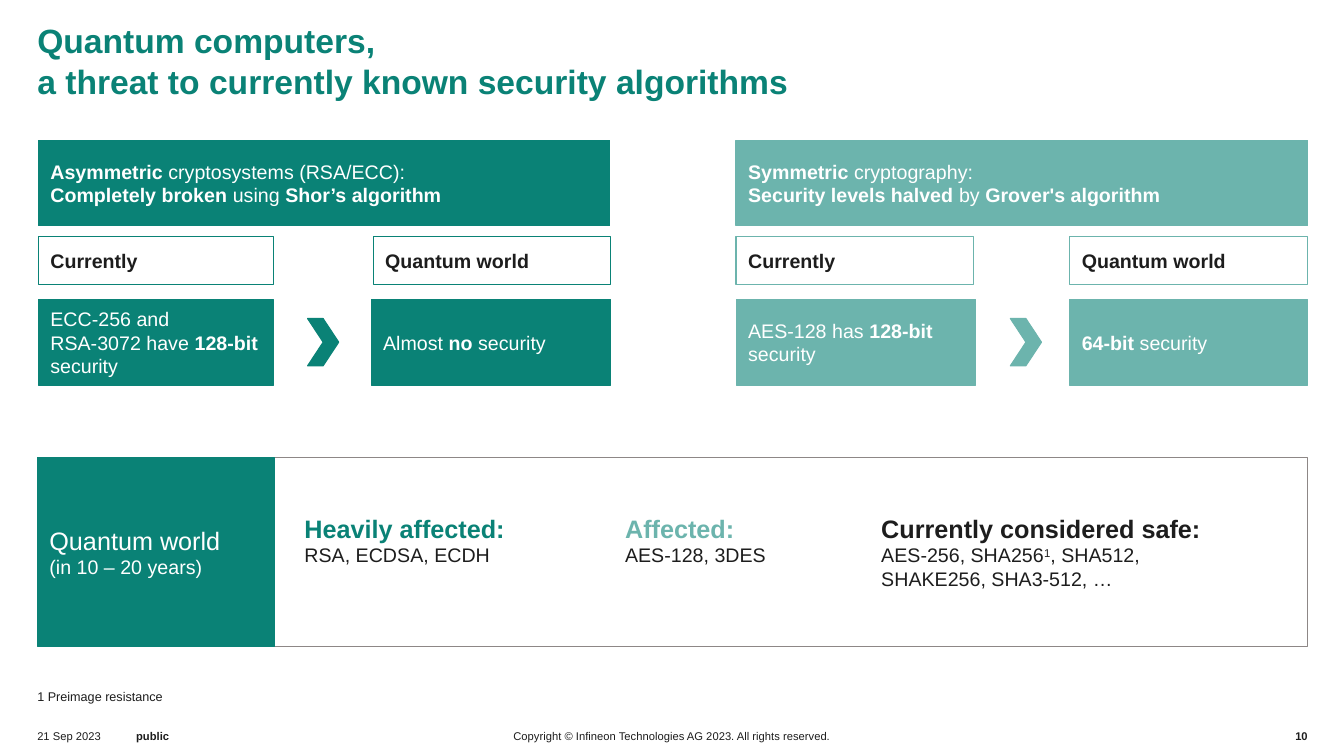
from pptx import Presentation
from pptx.dml.color import RGBColor
from pptx.enum.shapes import MSO_SHAPE
from pptx.enum.text import MSO_ANCHOR, PP_ALIGN
from pptx.util import Inches, Pt

RECT, CHEVRON = MSO_SHAPE.RECTANGLE, MSO_SHAPE.CHEVRON
TOP, MIDDLE, BOTTOM = MSO_ANCHOR.TOP, MSO_ANCHOR.MIDDLE, MSO_ANCHOR.BOTTOM
LEFT, CENTER, RIGHT = PP_ALIGN.LEFT, PP_ALIGN.CENTER, PP_ALIGN.RIGHT

GREEN = RGBColor(0x0A, 0x82, 0x76)
MINT = RGBColor(0x6C, 0xB4, 0xAD)
INK = RGBColor(0x1D, 0x1D, 0x1D)
GREY = RGBColor(0x8D, 0x87, 0x86)
WHITE = RGBColor(0xFF, 0xFF, 0xFF)


def write(s, lines, anchor, align=LEFT, margins=(0, 0)):
    """Fill a shape with (markup, size, colour) paragraphs.

    In the markup, ** switches bold, ^ switches superscript, \\n breaks a line.
    """
    tf = s.text_frame
    tf.word_wrap = True
    tf.vertical_anchor = anchor
    tf.margin_left = tf.margin_right = Inches(margins[0])
    tf.margin_top = tf.margin_bottom = Inches(margins[1])
    for i, (markup, size, color) in enumerate(lines):
        p = tf.paragraphs[0] if i == 0 else tf.add_paragraph()
        p.alignment = align
        for j, part in enumerate(markup.split("**")):
            for k, piece in enumerate(part.split("^")):
                for n, text in enumerate(piece.split("\n")):
                    if n:
                        p.add_line_break()
                    if text:
                        add_run(p, text, size, color, j % 2 == 1, k % 2 == 1)


def add_run(p, text, size, color, bold, superscript):
    r = p.add_run()
    r.text = text
    r.font.name = "Arial"
    r.font.size = Pt(size)
    r.font.bold = bold
    r.font.color.rgb = color
    if superscript:
        r.font._element.set("baseline", "30000")


def add_text(slide, x, y, w, h, lines, anchor=TOP, align=LEFT):
    s = slide.shapes.add_textbox(Inches(x), Inches(y), Inches(w), Inches(h))
    write(s, lines, anchor, align)


def add_box(slide, x, y, w, h, fill, line, lines=(), kind=RECT):
    s = slide.shapes.add_shape(kind, Inches(x), Inches(y), Inches(w), Inches(h))
    s.shadow.inherit = False
    s.fill.solid()
    s.fill.fore_color.rgb = fill
    s.line.color.rgb = line
    s.line.width = Pt(0.75)
    if lines:
        write(s, lines, MIDDLE, margins=(0.12, 0.08))


def add_comparison(slide, color, x, headline, now, later):
    """Headline bar over a now/later pair; now and later are
    (label left, label width, box left, box width, text)."""
    add_box(slide, x, 1.39, 5.67, 0.85, color, color, [(headline, 14, WHITE)])
    for label, (label_x, label_w, box_x, box_w, text) in (
            ("**Currently**", now), ("**Quantum world**", later)):
        add_box(slide, label_x, 2.35, label_w, 0.47, WHITE, color,
                [(label, 14, INK)])
        add_box(slide, box_x, 2.97, box_w, 0.85, color, color,
                [(text, 14, WHITE)])


def main():
    prs = Presentation()
    prs.slide_width, prs.slide_height = Inches(13.33), Inches(7.5)
    slide = prs.slides.add_slide(prs.slide_layouts[6])

    # Title
    title = "**Quantum computers,\na threat to currently known security algorithms**"
    add_text(slide, 0.37, 0.21, 10.51, 0.79, [(title, 24, GREEN)], BOTTOM)

    # Asymmetric and symmetric comparisons
    add_comparison(
        slide, GREEN, 0.38,
        "**Asymmetric** cryptosystems (RSA/ECC):\n"
        "**Completely broken** using **Shor’s algorithm**",
        (0.38, 2.33, 0.38, 2.33, "ECC-256 and RSA-3072 have **128-bit** security"),
        (3.7, 2.36, 3.68, 2.38, "Almost **no **security"))
    add_comparison(
        slide, MINT, 7.3,
        "**Symmetric** cryptography:\n"
        "**Security levels halved **by **Grover's algorithm**",
        (7.3, 2.36, 7.3, 2.38, "AES-128 has **128-bit** security"),
        (10.61, 2.36, 10.61, 2.36, "**64-bit** security"))
    for x, color in ((3.05, GREEN), (10.02, MINT)):
        add_box(slide, x, 3.16, 0.31, 0.47, color, color, kind=CHEVRON)

    # Outlook panel
    add_box(slide, 2.53, 4.54, 10.44, 1.87, WHITE, GREY)
    add_box(slide, 0.37, 4.54, 2.35, 1.87, GREEN, GREEN,
            [("Quantum world", 18, WHITE), ("(in 10 – 20 years)", 14, WHITE)])
    for x, w, h, heading, color, names in (
            (3.02, 2.86, 0.54, "Heavily affected:", GREEN, "RSA, ECDSA, ECDH"),
            (6.2, 2.26, 0.54, "Affected:", MINT, "AES-128, 3DES"),
            (8.74, 4.12, 0.77, "Currently considered safe:", INK,
             "AES-256, SHA256^1^, SHA512, \nSHAKE256, SHA3-512, …")):
        add_text(slide, x, 5.09, w, h,
                 [(f"**{heading}**", 18, color), (names, 14, INK)])

    # Footnote and footer
    add_text(slide, 0.37, 6.83, 11.65, 0.15,
             [("1 Preimage resistance", 9, INK)], MIDDLE)
    for x, w, text, align in (
            (0.37, 0.8, "21 Sep 2023", LEFT),
            (1.35, 1.06, "**public**", LEFT),
            (4.97, 3.39,
             "Copyright © Infineon Technologies AG 2023. All rights reserved.",
             CENTER),
            (12.55, 0.42, "**10**", RIGHT)):
        add_text(slide, x, 7.1, w, 0.4, [(text, 8, INK)], MIDDLE, align)

    prs.save("out.pptx")


if __name__ == "__main__":
    main()
